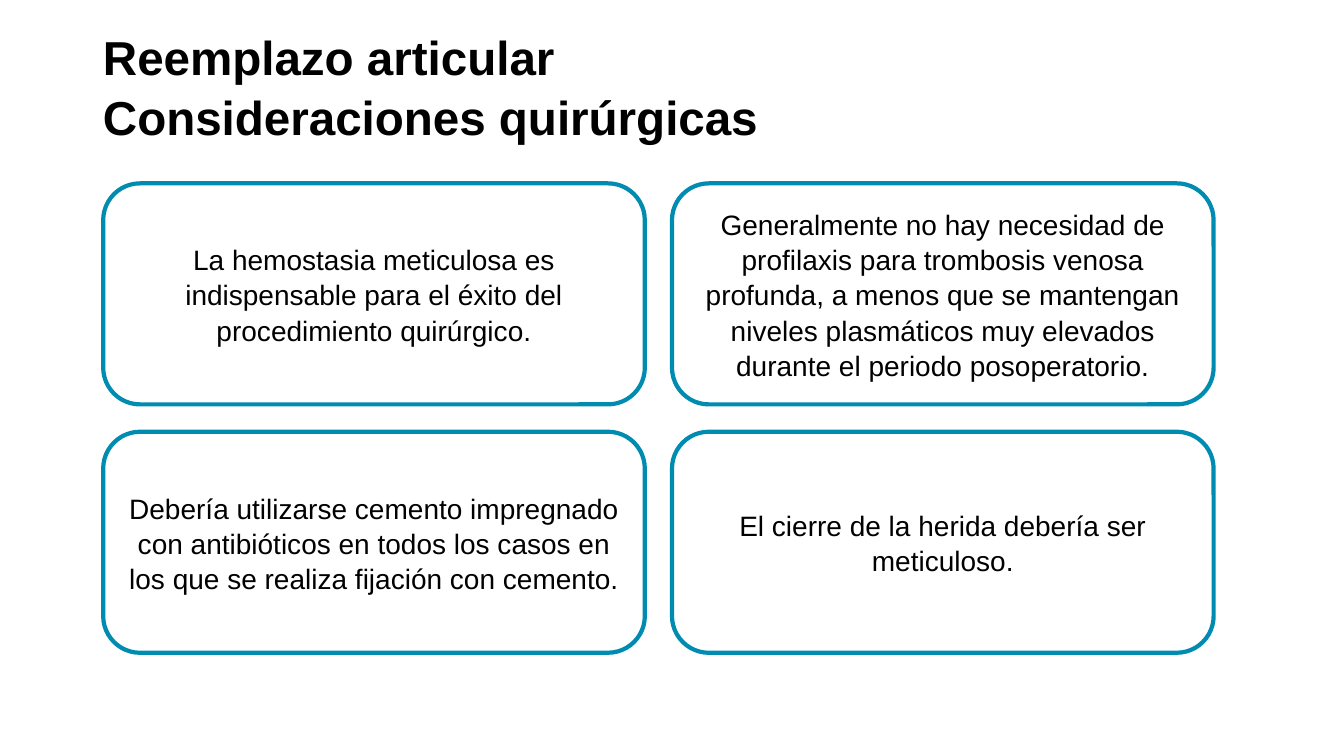
from pptx import Presentation
from pptx.dml.color import RGBColor
from pptx.enum.shapes import MSO_SHAPE
from pptx.enum.text import MSO_ANCHOR, PP_ALIGN
from pptx.util import Pt

COLOURS = {"text": "000000", "fill": "FFFFFF", "border": "008BB0"}
TITLE = "Reemplazo articular\vConsideraciones quirúrgicas"
CONSIDERATIONS = [
    "La hemostasia meticulosa es indispensable para el éxito del procedimiento quirúrgico.",
    "Generalmente no hay necesidad de profilaxis para trombosis venosa profunda, "
    "a menos que se mantengan niveles plasmáticos muy elevados durante el periodo posoperatorio.",
    "Debería utilizarse cemento impregnado con antibióticos en todos los casos "
    "en los que se realiza fijación con cemento.",
    "El cierre de la herida debería ser meticuloso.",
]
COLUMNS = 2
GRID_LEFT, GRID_TOP = 73.7, 131
CARD_WIDTH, CARD_HEIGHT = 386.9, 157.9
COLUMN_STEP, ROW_STEP = 406.3, 177.4


def colour(name):
    return RGBColor.from_string(COLOURS[name])


def write_text(box, text, size, align, bold=False):
    frame = box.text_frame
    frame.word_wrap = True
    frame.vertical_anchor = MSO_ANCHOR.MIDDLE
    para = frame.paragraphs[0]
    para.text = text
    para.alignment = align
    para.line_spacing = 1.05
    para.font.name = "Arial"
    para.font.size = Pt(size)
    para.font.bold = bold
    para.font.color.rgb = colour("text")
    return frame


def add_title(page, text):
    box = page.shapes.add_textbox(Pt(66.5), Pt(18), Pt(828), Pt(85.7))
    write_text(box, text, 34, PP_ALIGN.LEFT, bold=True)


def add_card(page, left, top, text):
    card = page.shapes.add_shape(
        MSO_SHAPE.ROUNDED_RECTANGLE, Pt(left), Pt(top), Pt(CARD_WIDTH), Pt(CARD_HEIGHT)
    )
    card.shadow.inherit = False
    card.fill.solid()
    card.fill.fore_color.rgb = colour("fill")
    card.line.color.rgb = colour("border")
    card.line.width = Pt(3)
    frame = write_text(card, text, 20, PP_ALIGN.CENTER)
    frame.margin_left = frame.margin_right = Pt(6.5)
    frame.margin_top = frame.margin_bottom = Pt(6.5)


def main():
    deck = Presentation()
    deck.slide_width, deck.slide_height = Pt(960), Pt(540)
    page = deck.slides.add_slide(deck.slide_layouts[6])
    add_title(page, TITLE)
    for index, text in enumerate(CONSIDERATIONS):
        row, column = divmod(index, COLUMNS)
        add_card(page, GRID_LEFT + column * COLUMN_STEP, GRID_TOP + row * ROW_STEP, text)
    deck.save("out.pptx")


if __name__ == "__main__":
    main()
